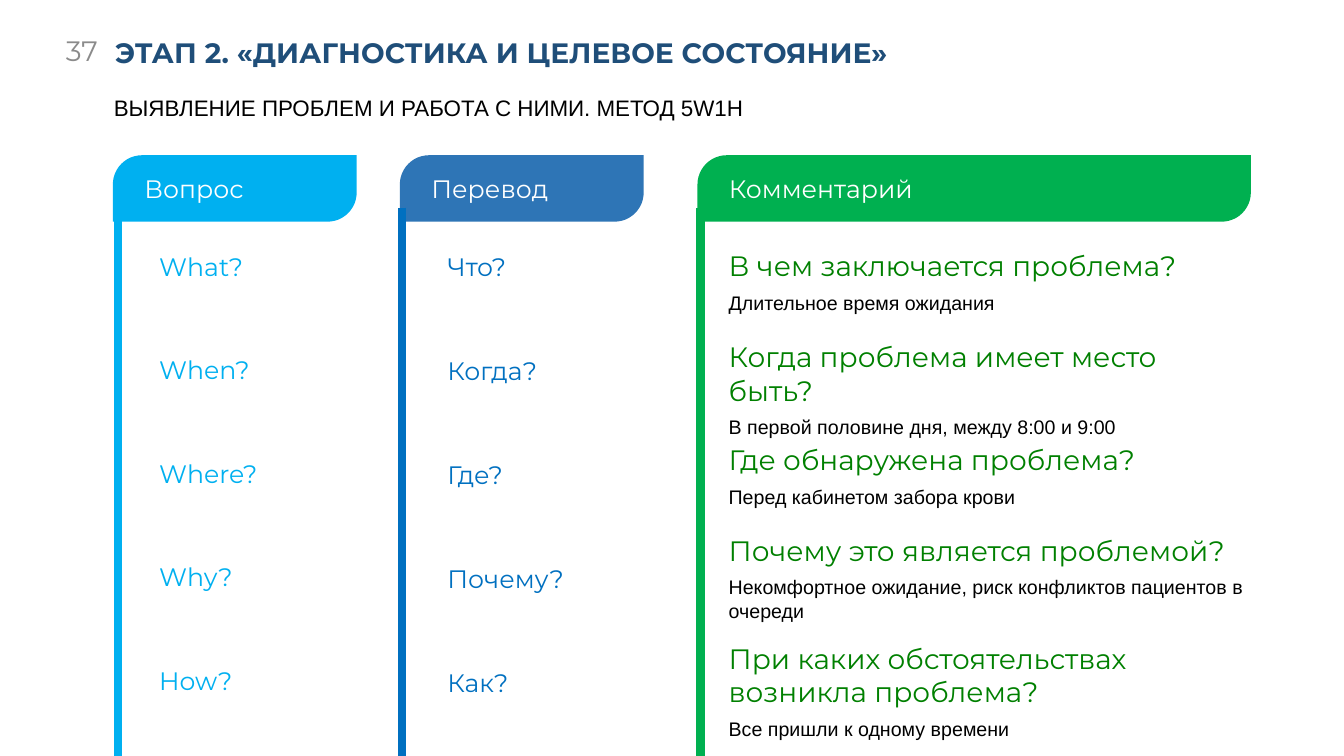
from dataclasses import dataclass

from pptx import Presentation
from pptx.dml.color import RGBColor
from pptx.enum import shapes, text
from pptx.oxml import parse_xml
from pptx.oxml.ns import nsdecls
from pptx.shapes.base import BaseShape
from pptx.slide import Slide
from pptx.util import Pt

WHITE = RGBColor(0xFF, 0xFF, 0xFF)
BLACK = RGBColor(0, 0, 0)
GREY = RGBColor(0x8B, 0x8B, 0x8B)
NAVY = RGBColor(0x1F, 0x4E, 0x79)
SKY = RGBColor(0x00, 0xB0, 0xF0)
STEEL = RGBColor(0x2E, 0x75, 0xB6)
BLUE = RGBColor(0x00, 0x70, 0xC0)
GREEN = RGBColor(0x00, 0xB0, 0x50)
DARK_GREEN = RGBColor(0x00, 0x80, 0x00)

HEADING_FONT, BODY_FONT = "Montserrat", "Arial"
SLIDE_WIDTH, SLIDE_HEIGHT = 960, 540
HEADER_TOP, HEADER_HEIGHT = 110.9, 47.5
RULE_TOP = 148.3
WORD_TOP, WORD_HEIGHT = 175.7, 28.8
COMMENT_LEFT = 513.4


@dataclass(frozen=True)
class Box:
    left: float
    top: float
    width: float
    height: float


@dataclass(frozen=True)
class Line:
    words: str
    size: float
    color: RGBColor
    font: str = HEADING_FONT
    bold: bool = False


@dataclass(frozen=True)
class Column:
    heading: str
    left: float
    width: float
    label_width: float
    rule_x: float
    header_color: RGBColor
    rule_color: RGBColor


@dataclass(frozen=True)
class WordList:
    left: float
    step: float
    color: RGBColor
    words: tuple[tuple[str, float], ...]


@dataclass(frozen=True)
class Comment:
    question: str
    answer: str
    top: float
    height: float
    width: float = 379.4


COLUMNS = (
    Column("Вопрос", 80.6, 174.2, 149.8, 84.2, SKY, SKY),
    Column("Перевод", 285.6, 174.2, 149.8, 287.3, STEEL, BLUE),
    Column("Комментарий", 498.2, 395.3, 204.5, 500.4, GREEN, GREEN),
)
WORD_LISTS = (
    WordList(106.6, 74, SKY, (("What?", 82.8), ("When?", 87.1), ("Where?", 95),
                              ("Why?", 73.4), ("How?", 75.6))),
    WordList(312.5, 74.35, BLUE, (("Что?", 67.7), ("Когда?", 90.7), ("Где?", 67.7),
                                  ("Почему?", 109.4), ("Как?", 68.4))),
)
COMMENTS = (
    Comment("В чем заключается проблема?", "Длительное время ожидания", 174.2, 54.7),
    Comment("Когда проблема имеет место быть?",
            "В первой половине дня, между 8:00 и 9:00", 239, 78.5),
    Comment("Где обнаружена проблема?", "Перед кабинетом забора крови", 312.5, 54.7),
    Comment("Почему это является проблемой?",
            "Некомфортное ожидание, риск конфликтов пациентов в очереди",
            377.3, 71.3, 414.7),
    Comment("При каких обстоятельствах возникла проблема?",
            "Все пришли к одному времени", 454.3, 78.5),
)


def write(shape: BaseShape, lines: list[Line], middle: bool = False, wrap: bool = True,
          align: text.PP_ALIGN = text.PP_ALIGN.LEFT) -> None:
    frame = shape.text_frame
    frame.word_wrap = wrap
    frame.auto_size = text.MSO_AUTO_SIZE.NONE
    frame.vertical_anchor = text.MSO_ANCHOR.MIDDLE if middle else text.MSO_ANCHOR.TOP
    for index, line in enumerate(lines):
        paragraph = frame.add_paragraph() if index else frame.paragraphs[0]
        paragraph.alignment = align
        paragraph.line_spacing = 1.0
        paragraph.space_before = Pt(6 if index else 0)
        run = paragraph.add_run()
        run.text = line.words
        run.font.name = line.font
        run.font.size = Pt(line.size)
        run.font.bold = line.bold
        run.font.color.rgb = line.color


def add_text(slide: Slide, box: Box, lines: list[Line], middle: bool = False,
             wrap: bool = True, align: text.PP_ALIGN = text.PP_ALIGN.LEFT) -> None:
    textbox = slide.shapes.add_textbox(Pt(box.left), Pt(box.top),
                                       Pt(box.width), Pt(box.height))
    write(textbox, lines, middle, wrap, align)


def add_title(slide: Slide) -> None:
    title = slide.shapes.title
    title.left, title.top, title.width, title.height = Pt(75), Pt(18), Pt(795), Pt(39)
    write(title, [Line("ЭТАП 2. «ДИАГНОСТИКА И ЦЕЛЕВОЕ СОСТОЯНИЕ»", 20, NAVY, bold=True)],
          middle=True)


def add_column(slide: Slide, column: Column) -> None:
    header = slide.shapes.add_shape(
        shapes.MSO_SHAPE.ROUND_2_DIAG_RECTANGLE,
        Pt(column.left), Pt(HEADER_TOP), Pt(column.width), Pt(HEADER_HEIGHT))
    header.adjustments[0] = 0.44
    header.adjustments[1] = 0
    header.shadow.inherit = False
    header.fill.solid()
    header.fill.fore_color.rgb = column.header_color
    header.line.fill.background()
    add_text(slide, Box(column.left + 15.4, 115.2, column.label_width, 38.9),
             [Line(column.heading, 18, WHITE)], middle=True)

    rule = slide.shapes.add_connector(
        shapes.MSO_CONNECTOR.STRAIGHT, Pt(column.rule_x), Pt(RULE_TOP),
        Pt(column.rule_x), Pt(SLIDE_HEIGHT))
    rule.line.color.rgb = column.rule_color
    rule.line.width = Pt(6)
    rule._element.spPr.append(parse_xml(f"<a:effectLst {nsdecls('a')}/>"))


def main() -> None:
    presentation = Presentation()
    presentation.slide_width = Pt(SLIDE_WIDTH)
    presentation.slide_height = Pt(SLIDE_HEIGHT)
    slide = presentation.slides.add_slide(presentation.slide_layouts[5])

    add_title(slide)
    add_text(slide, Box(0, 16.6, 77, 39), [Line("37", 20, GREY)],
             middle=True, align=text.PP_ALIGN.RIGHT)
    add_text(slide, Box(74.2, 63.4, 483, 26.6),
             [Line("ВЫЯВЛЕНИЕ ПРОБЛЕМ И РАБОТА С НИМИ. МЕТОД 5W1H", 16, BLACK, BODY_FONT)],
             wrap=False)
    for column in COLUMNS:
        add_column(slide, column)
    for word_list in WORD_LISTS:
        for row, (word, width) in enumerate(word_list.words):
            top = WORD_TOP + row * word_list.step
            add_text(slide, Box(word_list.left, top, width, WORD_HEIGHT),
                     [Line(word, 18, word_list.color)], wrap=False)
    for comment in COMMENTS:
        add_text(slide, Box(COMMENT_LEFT, comment.top, comment.width, comment.height),
                 [Line(comment.question, 20, DARK_GREEN),
                  Line(comment.answer, 14, BLACK, BODY_FONT)])

    presentation.save("out.pptx")


if __name__ == "__main__":
    main()
